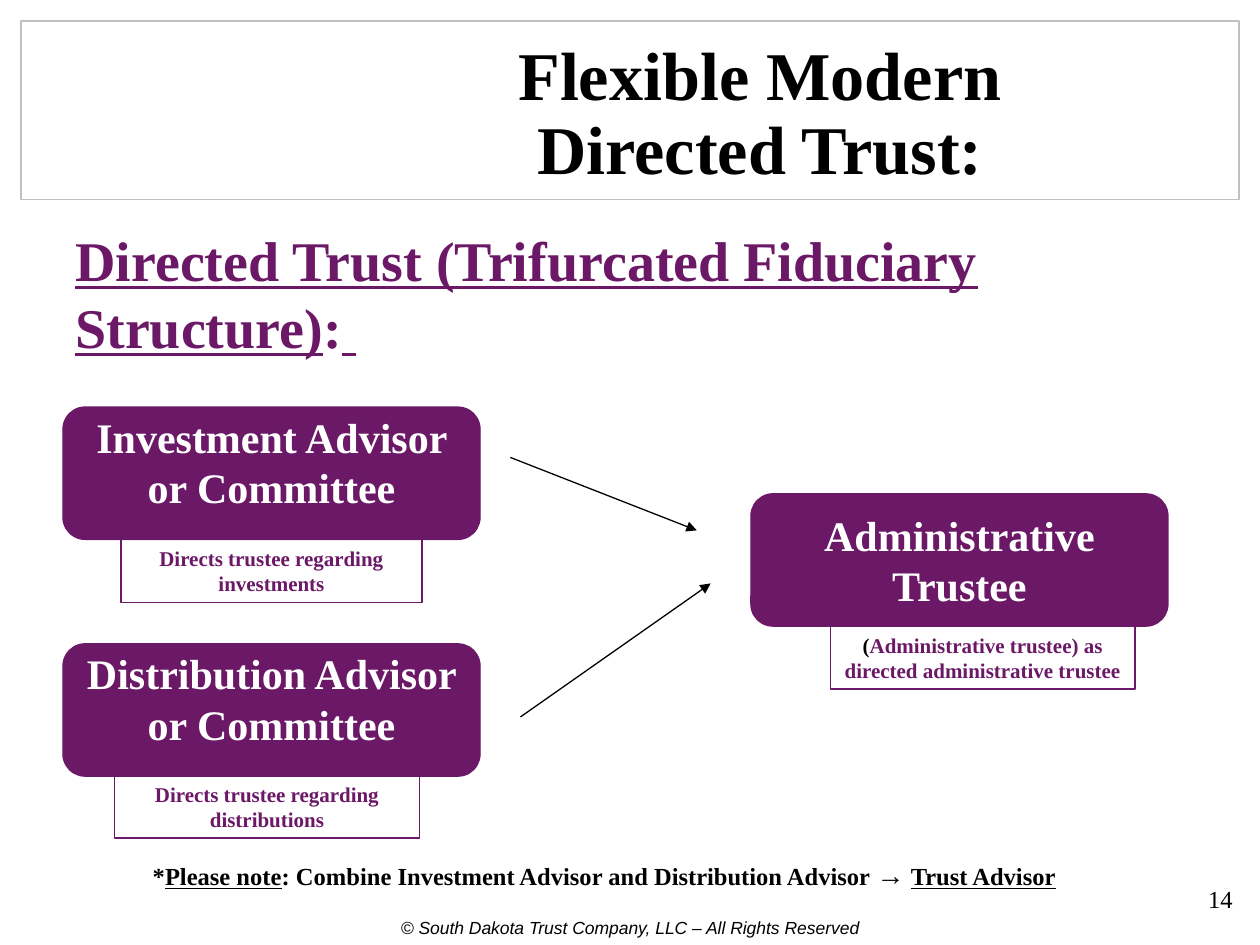
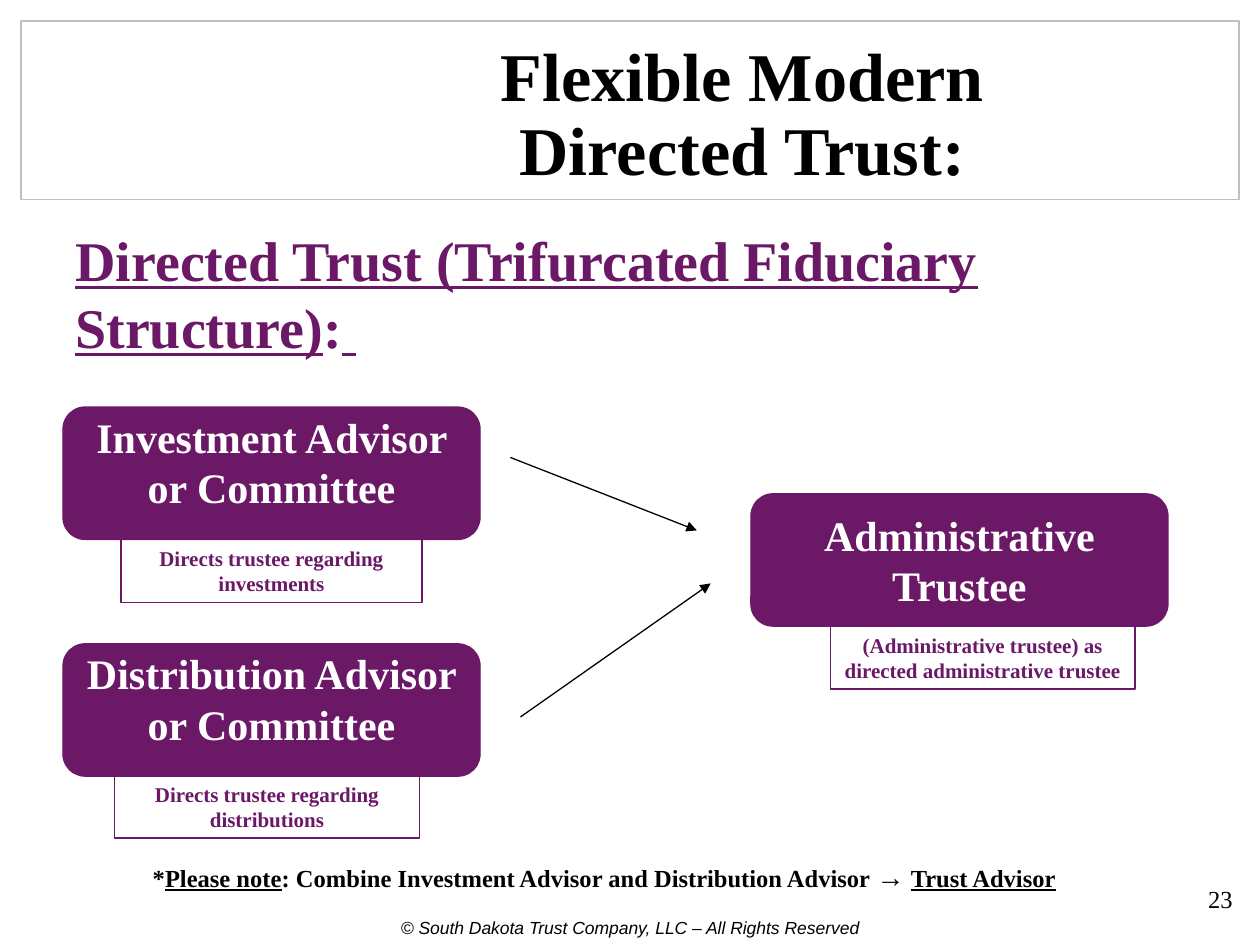
from dataclasses import dataclass

from lxml.etree import SubElement
from pptx import Presentation
from pptx.dml.color import RGBColor
from pptx.enum.shapes import MSO_CONNECTOR, MSO_SHAPE
from pptx.enum.text import MSO_ANCHOR, MSO_AUTO_SIZE, PP_ALIGN
from pptx.oxml.ns import qn
from pptx.util import Pt


@dataclass(frozen=True)
class Theme:
    """Colours, fonts and type sizes of the deck."""
    plum: RGBColor = RGBColor(0x6B, 0x18, 0x67)
    black: RGBColor = RGBColor(0, 0, 0)
    white: RGBColor = RGBColor(0xFF, 0xFF, 0xFF)
    silver: RGBColor = RGBColor(0xC0, 0xC0, 0xC0)
    serif: str = "Times New Roman"
    sans: str = "Arial"
    title: float = 39
    heading: float = 32
    role: float = 24
    arrow_sign: float = 16
    note: float = 14
    caption: float = 12
    copyright: float = 10
    hairline: float = 0.75


THEME = Theme()
ROLE_SIZE = (238.3, 75.6)


def add_span(para, text, size, color, bold=True, underline=False, italic=False, font=THEME.serif):
    """Append one formatted run to a paragraph."""
    span = para.add_run()
    span.text = text
    span.font.name = font
    span.font.size = Pt(size)
    span.font.color.rgb = color
    span.font.bold = bold
    span.font.underline = underline
    span.font.italic = italic


def add_text_box(page, place, align, anchor=MSO_ANCHOR.TOP):
    """Add a wrapping text box and return its first paragraph."""
    frame = page.shapes.add_textbox(*map(Pt, place)).text_frame
    frame.word_wrap = True
    frame.vertical_anchor = anchor
    para = frame.paragraphs[0]
    para.alignment = align
    return para


def add_box(page, kind, place, line, fill=None):
    """Add a flat outlined shape with centred text."""
    box = page.shapes.add_shape(kind, *map(Pt, place))
    box.shadow.inherit = False
    box.line.color.rgb = line
    box.line.width = Pt(THEME.hairline)
    if fill is None:
        box.fill.background()
    else:
        box.fill.solid()
        box.fill.fore_color.rgb = fill
    box.text_frame.word_wrap = True
    box.text_frame.paragraphs[0].alignment = PP_ALIGN.CENTER
    return box


def add_arrow(page, start, end):
    """Draw a thin black arrow between two points."""
    arrow = page.shapes.add_connector(MSO_CONNECTOR.STRAIGHT, *map(Pt, start + end))
    arrow.line.color.rgb = THEME.black
    arrow.line.width = Pt(THEME.hairline)
    SubElement(arrow.line._get_or_add_ln(), qn("a:tailEnd"), type="triangle")
    SubElement(arrow._element.spPr, qn("a:effectLst"))


def add_title_band(page, title_left, title_top):
    """Draw the framed band and set the two-line title in it."""
    add_box(page, MSO_SHAPE.RECTANGLE, (12, 12, 696, 102.2), THEME.silver)
    title = page.shapes.title
    title.left, title.top, title.width, title.height = map(Pt, (title_left, title_top, 531.4, 90.7))
    frame = title.text_frame
    frame.word_wrap = True
    frame.auto_size = MSO_AUTO_SIZE.NONE
    frame.vertical_anchor = MSO_ANCHOR.TOP
    for index, text in enumerate(("Flexible Modern ", "Directed Trust: ")):
        para = frame.add_paragraph() if index else frame.paragraphs[0]
        para.alignment = PP_ALIGN.CENTER
        para.line_spacing = 0.9
        para.space_before = Pt(0)
        add_span(para, text, THEME.title, THEME.black)


def add_heading(page):
    """Write the underlined heading below the band."""
    para = add_text_box(page, (36, 125.3, 648, 356.4), PP_ALIGN.LEFT)
    for text, underline in (
        ("Directed Trust (Trifurcated Fiduciary Structure)", True),
        (":", False),
        (" ", True),
    ):
        add_span(para, text, THEME.heading, THEME.plum, underline=underline)


def add_role(page, left, top, name, caption_place, caption_spans, bottom_inset=3.6):
    """Draw a role with a caption placed relative to its corner."""
    role = add_box(page, MSO_SHAPE.ROUNDED_RECTANGLE, (left, top, *ROLE_SIZE), THEME.plum, THEME.plum)
    role.text_frame.vertical_anchor = MSO_ANCHOR.MIDDLE
    role.text_frame.margin_bottom = Pt(bottom_inset)
    add_span(role.text_frame.paragraphs[0], name, THEME.role, THEME.white)
    shift_x, shift_y, width = caption_place
    caption = add_box(page, MSO_SHAPE.RECTANGLE, (left + shift_x, top + shift_y, width, 36), THEME.plum)
    caption.text_frame.vertical_anchor = MSO_ANCHOR.TOP
    for text, color in caption_spans:
        add_span(caption.text_frame.paragraphs[0], text, THEME.caption, color)


def add_diagram(page, bracket_color):
    """Draw two advisors pointing to the administrative trustee."""
    for top, duty, caption_place in (
        (232.6, "Investment", (33.1, 75.6, 172.1)),
        (367.9, "Distribution", (29.5, 75, 174.2)),
    ):
        caption = f"Directs trustee regarding {duty.lower()}s"
        add_role(page, 36, top, f"{duty} Advisor or Committee", caption_place,
                 [(caption, THEME.plum)], bottom_inset=16.8)
    add_role(page, 429.1, 282.2, "Administrative Trustee", (45.4, 75.6, 174.2), [
        ("(", bracket_color),
        ("Administrative trustee) as directed administrative trustee", THEME.plum),
    ])
    add_arrow(page, (291.6, 261.4), (398.2, 303.1))
    add_arrow(page, (297.4, 409.7), (406.1, 333.4))


def add_note(page, top):
    """Write the note below the diagram."""
    para = add_text_box(page, (77.8, top, 535, 26.6), PP_ALIGN.CENTER)
    for text, size, underline in (
        ("*", THEME.note, False),
        ("Please note", THEME.note, True),
        (": Combine Investment Advisor and Distribution Advisor ", THEME.note, False),
        ("→", THEME.arrow_sign, False),
        (" ", THEME.note, False),
        ("Trust Advisor", THEME.note, True),
    ):
        add_span(para, text, size, THEME.black, underline=underline)


def add_footer(page, number):
    """Write the copyright line and the page number."""
    para = add_text_box(page, (0, 520.6, 720, 19.4), PP_ALIGN.CENTER)
    add_span(para, "© South Dakota Trust Company, LLC – All Rights Reserved", THEME.copyright,
             THEME.black, bold=False, italic=True, font=THEME.sans)
    para = add_text_box(page, (549.4, 499, 162, 28.8), PP_ALIGN.RIGHT, MSO_ANCHOR.MIDDLE)
    add_span(para, number, THEME.note, THEME.black, bold=False)


def add_trust_page(deck, number, title_left, title_top, note_top, bracket_color):
    """Build one directed trust slide."""
    page = deck.slides.add_slide(deck.slide_layouts[5])
    add_title_band(page, title_left, title_top)
    add_heading(page)
    add_diagram(page, bracket_color)
    add_note(page, note_top)
    add_footer(page, number)


def main():
    """Build and save the deck."""
    deck = Presentation()
    deck.slide_width, deck.slide_height = Pt(720), Pt(540)
    add_trust_page(deck, "14", 173.5, 20.2, 486.7, THEME.black)
    add_trust_page(deck, "23", 163.4, 20.9, 487.4, THEME.plum)
    deck.save("out.pptx")


if __name__ == "__main__":
    main()
